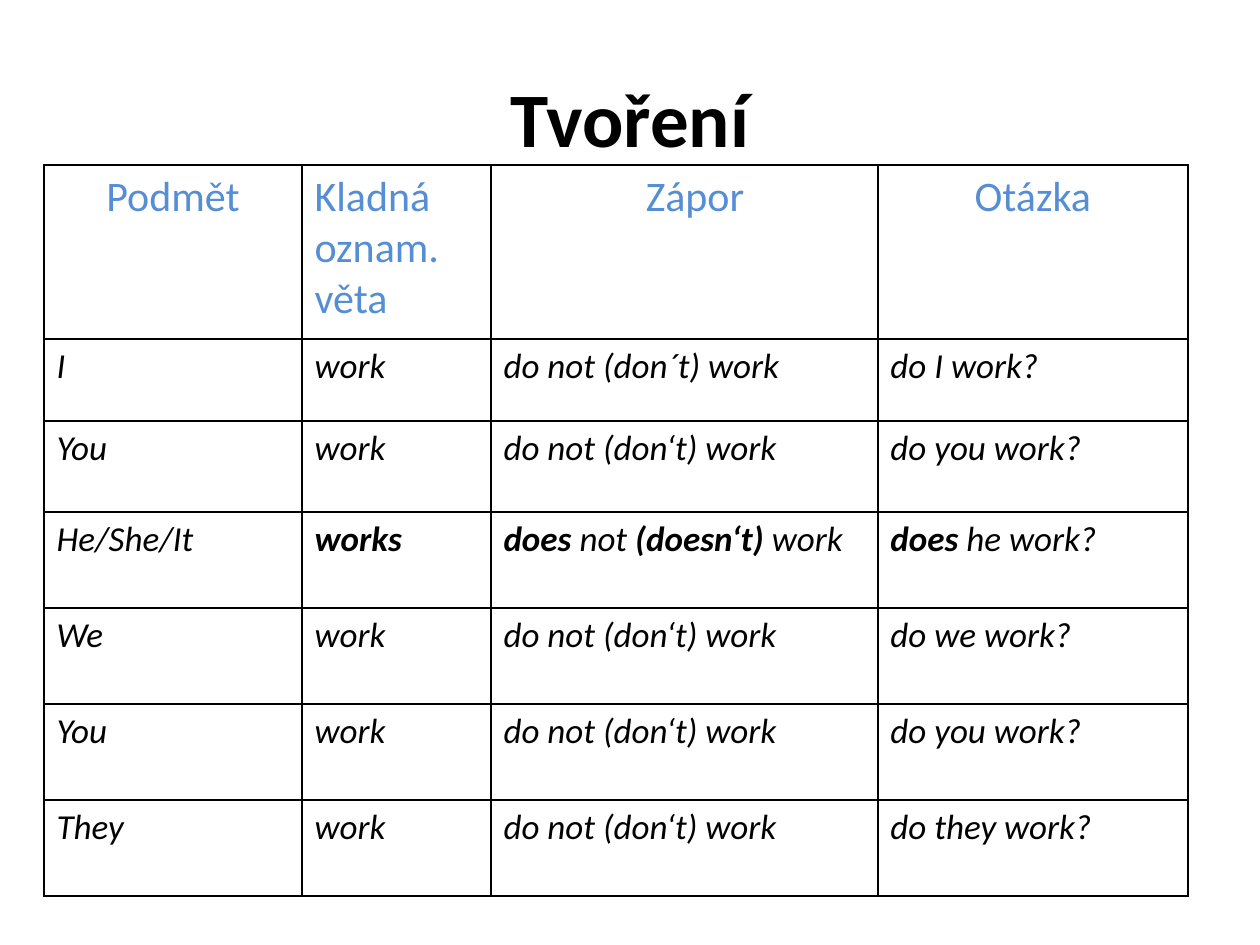
import pptx
import pptx.util
import pptx.dml.color
import pptx.enum.text
import pptx.oxml
import pptx.oxml.ns

RGB = pptx.dml.color.RGBColor
ALIGN = pptx.enum.text.PP_ALIGN
BLACK = RGB(0x00, 0x00, 0x00)
BLUE = RGB(0x55, 0x8E, 0xD5)
FONT = "Calibri"
PX = 914400 // 126

TITLE = "Tvoření"
HEADS = ["Podmět", "Kladná\noznam.\nvěta", "Zápor", "Otázka"]
# Asterisks enclose bold words.
ROWS = [
    ["I", "work", "do not (don´t) work", "do I work?"],
    ["You", "work", "do not (don‘t) work", "do you work?"],
    ["He/She/It", "*works*", "*does *not* (doesn‘t) *work", "*does* he work?"],
    ["We", "work", "do not (don‘t) work", "do we work?"],
    ["You", "work", "do not (don‘t) work", "do you work?"],
    ["They", "work", "do not (don‘t) work", "do they work?"],
]
WIDTHS = [258, 189, 387, 310]
HEIGHTS = [174, 82, 91] + [96] * 4
TITLE_BOX = (63, 38, 1134, 157)
LEFT, TOP = 44, 165
INDENT = 34  # left margin of the negative heading

TITLE_STYLE = {"size": pptx.util.Pt(44), "bold": True}
HEAD_STYLE = {"size": pptx.util.Pt(24)}
BODY_STYLE = {"size": pptx.util.Pt(20), "italic": True}


def px(*sizes):
    return [size * PX for size in sizes]


def style(font, color, values):
    font.name = FONT
    font.color.rgb = color
    for name, value in values.items():
        setattr(font, name, value)


def write(frame, text, color, values, align=ALIGN.LEFT):
    """Fill a frame, one paragraph per line, with bold between asterisks."""
    for n, line in enumerate(text.split("\n")):
        par = frame.add_paragraph() if n else frame.paragraphs[0]
        par.alignment = align
        for k, part in enumerate(line.split("*")):
            if part:
                run = par.add_run()
                run.text = part
                style(run.font, color, {"bold": k % 2 == 1, **values})


def frame_cell(cell):
    """Draw thin black borders around a cell and leave it unfilled."""
    props = cell._tc.get_or_add_tcPr()
    for side in "LRTB":
        props.append(pptx.oxml.parse_xml(
            f'<a:ln{side} {pptx.oxml.ns.nsdecls("a")} w="12700"><a:solidFill>'
            f'<a:srgbClr val="{BLACK}"/></a:solidFill></a:ln{side}>'))
    cell.fill.background()


def main():
    deck = pptx.Presentation()
    deck.slide_width, deck.slide_height = px(1260, 945)
    slide = deck.slides.add_slide(deck.slide_layouts[5])

    title = slide.shapes.title
    title.left, title.top, title.width, title.height = px(*TITLE_BOX)
    title.text_frame.vertical_anchor = pptx.enum.text.MSO_ANCHOR.MIDDLE
    write(title.text_frame, TITLE, BLACK, TITLE_STYLE, ALIGN.CENTER)

    box = px(LEFT, TOP, sum(WIDTHS), sum(HEIGHTS))
    table = slide.shapes.add_table(len(HEIGHTS), len(WIDTHS), *box).table
    table.first_row = table.horz_banding = False
    for col, width in zip(table.columns, px(*WIDTHS)):
        col.width = width
    for row, height in zip(table.rows, px(*HEIGHTS)):
        row.height = height

    for r, texts in enumerate([HEADS] + ROWS):
        for c, text in enumerate(texts):
            cell = table.cell(r, c)
            frame_cell(cell)
            if r:
                write(cell.text_frame, text, BLACK, BODY_STYLE)
            else:
                align = ALIGN.LEFT if "\n" in text else ALIGN.CENTER
                write(cell.text_frame, text, BLUE, HEAD_STYLE, align)
    table.cell(0, HEADS.index("Zápor")).margin_left = INDENT * PX

    deck.save("out.pptx")


if __name__ == "__main__":
    main()
